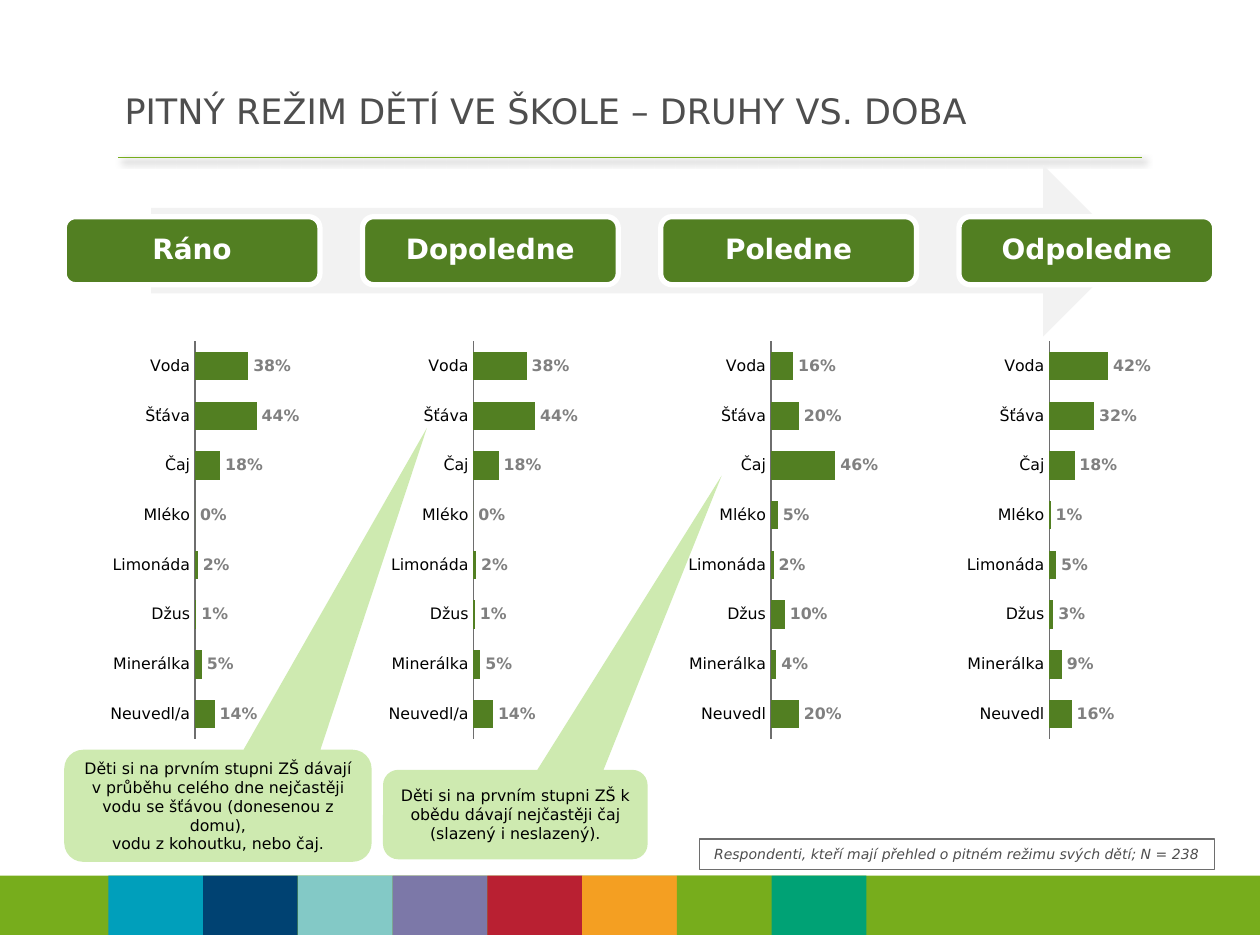
from dataclasses import dataclass

import lxml.etree
import pptx
import pptx.chart.data
import pptx.dml.color
import pptx.enum.chart
import pptx.enum.shapes
import pptx.enum.text
import pptx.oxml
import pptx.oxml.ns
import pptx.util

Inches = pptx.util.Inches
Pt = pptx.util.Pt
MSO = pptx.enum.shapes.MSO_SHAPE
ALIGN = pptx.enum.text.PP_ALIGN
ANCHOR = pptx.enum.text.MSO_ANCHOR
qn = pptx.oxml.ns.qn

FONT = "DejaVu Sans"
GREEN = "527F22"
STRIPES = ["009FBB", "004272", "83C9C6", "7C78A8", "B92032", "F49F22", "77AD1C", "00A275"]
DRINKS = ["Voda", "Šťáva", "Čaj", "Mléko", "Limonáda", "Džus", "Minerálka"]
PLOT = {"x": 0.477, "y": 0.127, "w": 0.416, "h": 0.873}


@dataclass
class Box:
    x: float
    y: float
    w: float
    h: float

    def emu(self) -> tuple:
        return tuple(Inches(v) for v in (self.x, self.y, self.w, self.h))


@dataclass
class Period:
    name: str
    chart_x: float
    no_answer: str
    values: list[float]


@dataclass
class Callout:
    box: Box
    adjustments: list[float]
    text: str


PERIODS = [
    Period("Ráno", 0.27, "Neuvedl/a", [0.38, 0.44, 0.18, 0, 0.02, 0.01, 0.05, 0.14]),
    Period("Dopoledne", 2.48, "Neuvedl/a", [0.38, 0.44, 0.18, 0, 0.02, 0.01, 0.05, 0.14]),
    Period("Poledne", 4.84, "Neuvedl", [0.16, 0.2, 0.46, 0.05, 0.02, 0.1, 0.04, 0.2]),
    Period("Odpoledne", 7.05, "Neuvedl", [0.42, 0.32, 0.18, 0.01, 0.05, 0.03, 0.09, 0.16]),
]
CALLOUTS = [
    Callout(Box(0.51, 5.95, 2.44, 0.89), [0.68, -3.37, 0.17],
            "Děti si na prvním stupni ZŠ dávají v průběhu celého dne nejčastěji "
            "vodu se šťávou (donesenou z domu),\vvodu z kohoutku, nebo čaj."),
    Callout(Box(3.04, 6.11, 2.1, 0.71), [0.78, -3.79, 0.17],
            "Děti si na prvním stupni ZŠ k obědu dávají nejčastěji čaj (slazený i neslazený)."),
]


def rgb(value: str) -> pptx.dml.color.RGBColor:
    return pptx.dml.color.RGBColor.from_string(value)


def set_font(font, size: float, color: str, bold: bool = False, italic: bool = False) -> None:
    font.name = FONT
    font.size = Pt(size)
    font.color.rgb = rgb(color)
    font.bold = bold
    font.italic = italic


def add_shape(s, kind, box: Box, fill: str = "", line: str = "", width: float = 0.75):
    sp = s.shapes.add_shape(kind, *box.emu())
    sp.shadow.inherit = False
    if fill:
        sp.fill.solid()
        sp.fill.fore_color.rgb = rgb(fill)
    else:
        sp.fill.background()
    if line:
        sp.line.color.rgb = rgb(line)
        sp.line.width = Pt(width)
    else:
        sp.line.fill.background()
    return sp


def write(sp, text: str, size: float, color: str, align=ALIGN.CENTER, anchor=ANCHOR.MIDDLE,
          bold: bool = False, italic: bool = False) -> None:
    tf = sp.text_frame
    tf.word_wrap = True
    tf.vertical_anchor = anchor
    p = tf.paragraphs[0]
    p.text = text
    p.alignment = align
    set_font(p.font, size, color, bold, italic)


def add_title_rule(s) -> None:
    rule = s.shapes.add_connector(pptx.enum.shapes.MSO_CONNECTOR.STRAIGHT,
                                  Inches(0.94), Inches(1.25), Inches(9.06), Inches(1.25))
    rule.line.color.rgb = rgb("77AD1C")
    rule.line.width = Pt(0.75)
    effects = lxml.etree.SubElement(rule._element.spPr, qn("a:effectLst"))
    shadow = lxml.etree.SubElement(effects, qn("a:outerShdw"), blurRad=str(Pt(4)),
                                   dist=str(Pt(3)), dir="2700000", rotWithShape="0")
    color = lxml.etree.SubElement(shadow, qn("a:srgbClr"), val="000000")
    lxml.etree.SubElement(color, qn("a:alpha"), val="40000")


def set_plot_layout(chart) -> None:
    area = chart._chartSpace.find(".//" + qn("c:plotArea"))
    for old in area.findall(qn("c:layout")):
        area.remove(old)
    layout = pptx.oxml.parse_xml(f"<c:layout {pptx.oxml.ns.nsdecls('c')}/>")
    manual = lxml.etree.SubElement(layout, qn("c:manualLayout"))
    settings = {"layoutTarget": "inner", "xMode": "edge", "yMode": "edge", **PLOT}
    for tag, value in settings.items():
        lxml.etree.SubElement(manual, qn(f"c:{tag}"), val=str(value))
    area.insert(0, layout)


def add_period_chart(s, period: Period) -> None:
    data = pptx.chart.data.CategoryChartData(number_format="0%")
    data.categories = DRINKS + [period.no_answer]
    data.add_series(period.name, period.values)
    box = Box(period.chart_x, 2.25, 2.68, 3.62)
    chart = s.shapes.add_chart(pptx.enum.chart.XL_CHART_TYPE.BAR_CLUSTERED, *box.emu(), data).chart
    chart.has_legend = False
    chart.has_title = False
    set_font(chart.font, 18, "000000")
    set_plot_layout(chart)

    cat = chart.category_axis
    cat.reverse_order = True
    cat.has_major_gridlines = False
    cat.major_tick_mark = pptx.enum.chart.XL_TICK_MARK.NONE
    cat.format.line.color.rgb = rgb("6E6E6E")
    cat.format.line.width = Pt(0.75)
    set_font(cat.tick_labels.font, 9, "000000")
    val = chart.value_axis
    val.minimum_scale = 0
    val.maximum_scale = 1
    val.has_major_gridlines = False
    val.visible = False

    plot = chart.plots[0]
    plot.gap_width = 75
    plot.vary_by_categories = False
    fill = plot.series[0].format.fill
    fill.solid()
    fill.fore_color.rgb = rgb(GREEN)
    plot.has_data_labels = True
    labels = plot.data_labels
    labels.show_value = True
    labels.number_format = "0%"
    labels.number_format_is_linked = False
    labels.position = pptx.enum.chart.XL_LABEL_POSITION.OUTSIDE_END
    set_font(labels.font, 9, "808080", bold=True)


def main() -> None:
    prs = pptx.Presentation()
    prs.slide_width = Inches(10)
    prs.slide_height = Inches(7.5)
    s = prs.slides.add_slide(prs.slide_layouts[6])

    add_title_rule(s)
    add_shape(s, MSO.RECTANGLE, Box(0, 6.95, 10, 0.47), "77AD1C")
    for i, color in enumerate(STRIPES):
        add_shape(s, MSO.RECTANGLE, Box(0.86 + i * 0.752, 6.95, 0.752, 0.47), color)

    title = s.shapes.add_textbox(*Box(0.89, 0.62, 8.87, 0.51).emu())
    write(title, "PITNÝ REŽIM DĚTÍ VE ŠKOLE – DRUHY VS. DOBA", 20, "4E4E4E", ALIGN.LEFT)

    for callout in CALLOUTS:
        sp = add_shape(s, MSO.ROUNDED_RECTANGULAR_CALLOUT, callout.box, "CEEAB0")
        for i, value in enumerate(callout.adjustments):
            sp.adjustments[i] = value
        write(sp, callout.text, 9, "000000")

    note = add_shape(s, MSO.RECTANGLE, Box(5.55, 6.66, 4.09, 0.24), line="6E6E6E")
    write(note, "Respondenti, kteří mají přehled o pitném režimu svých dětí; N = 238",
          8, "4E4E4E", anchor=ANCHOR.TOP, italic=True)

    add_shape(s, MSO.RIGHT_ARROW, Box(1.2, 1.31, 7.76, 1.36), "F2F2F2")
    for i, period in enumerate(PERIODS):
        sp = add_shape(s, MSO.ROUNDED_RECTANGLE, Box(0.51 + i * 2.367, 1.72, 2.03, 0.54),
                       GREEN, "FFFFFF", 3)
        write(sp, period.name, 16, "FFFFFF", bold=True)
        sp.text_frame.paragraphs[0].line_spacing = 0.9
    for period in PERIODS:
        add_period_chart(s, period)

    prs.save("out.pptx")


if __name__ == "__main__":
    main()
